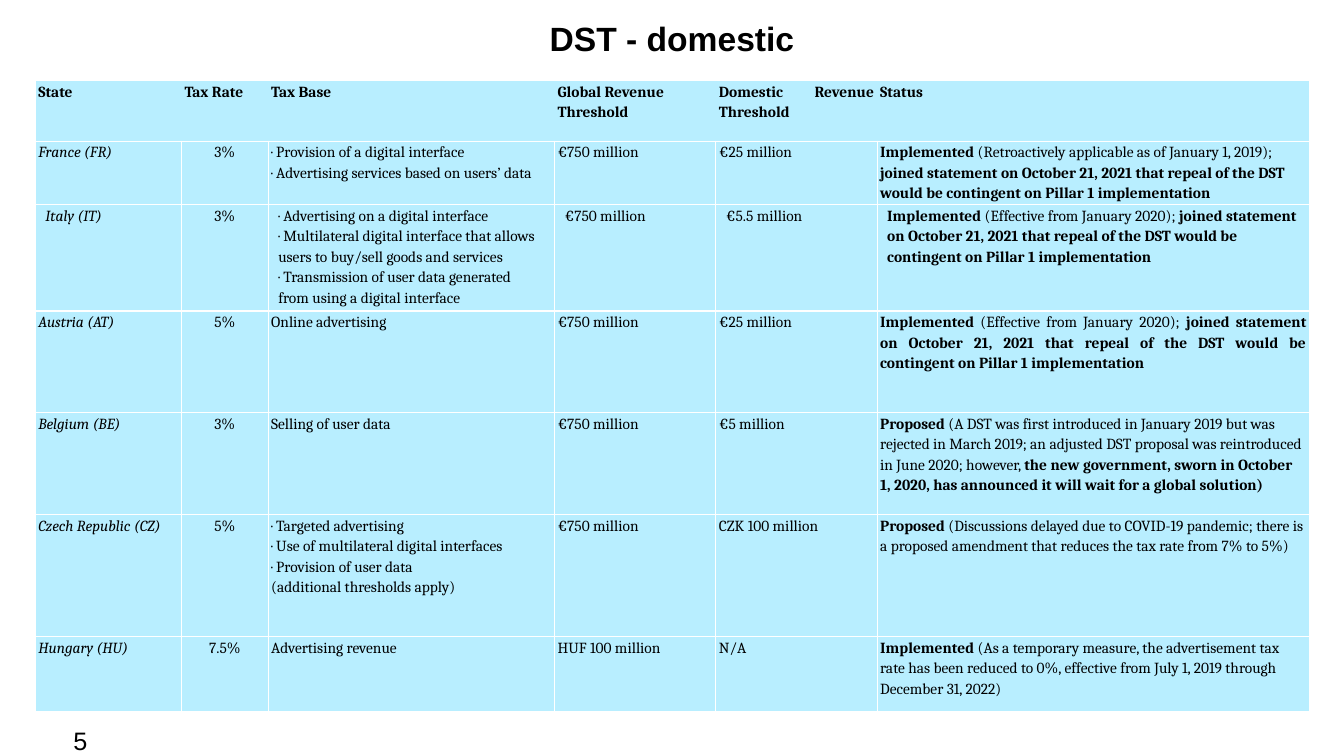
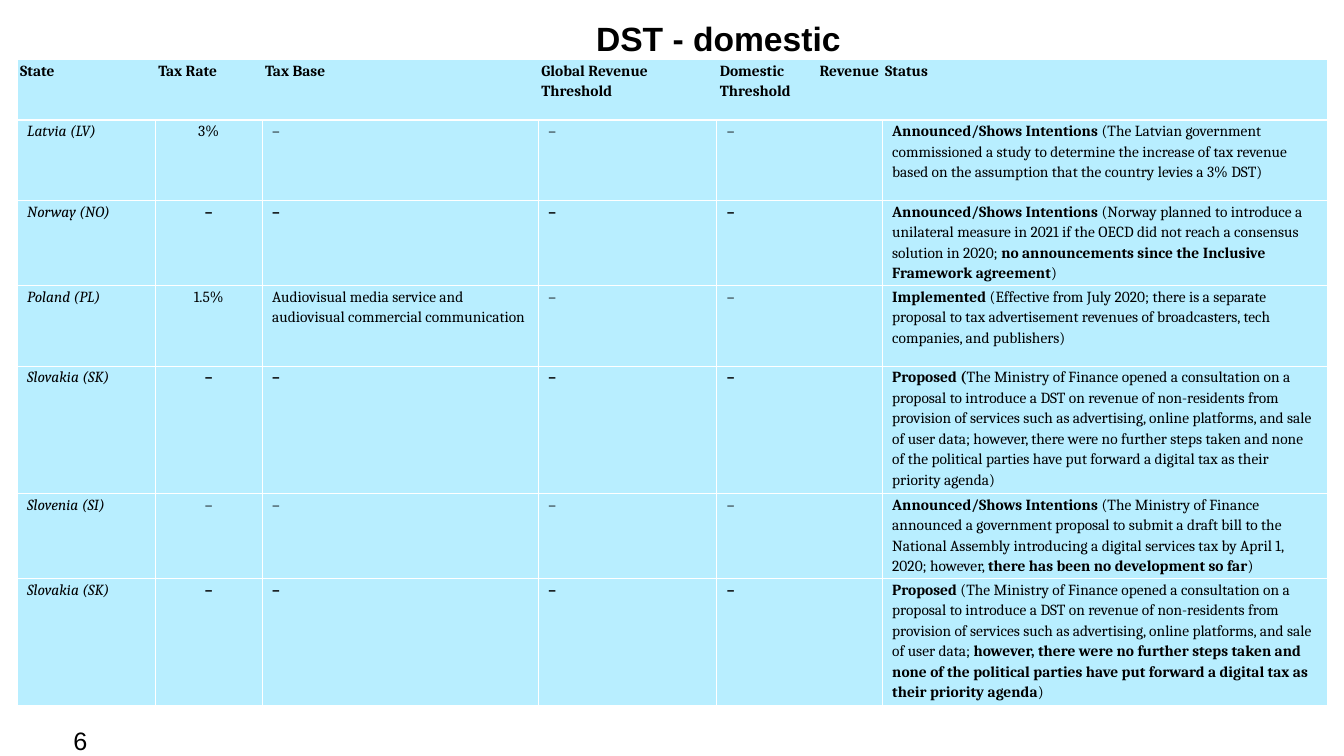
import dataclasses

import pptx
import pptx.dml.color
import pptx.enum.text
import pptx.oxml
import pptx.oxml.ns
import pptx.util
from pptx.util import Inches

BLACK = "000000"
WHITE = "FFFFFF"
LIGHT_BLUE = "B8EEFF"
ALIGN = pptx.enum.text.PP_ALIGN
ANCHOR = pptx.enum.text.MSO_ANCHOR

NARROW_INSET = 0.03
WIDE_INSET = 0.1

HEADINGS = ["State", "Tax Rate", "Tax Base", "Global Revenue Threshold",
            "Domestic Revenue Threshold", "Status"]
RATE_COLUMN = 1
DOMESTIC_COLUMN = 4

REPEAL = ("**joined statement on October 21, 2021 that repeal of the DST would be "
          "contingent on Pillar 1 implementation**")
EFFECTIVE_2020 = "**Implemented** (Effective from January 2020); " + REPEAL
CONSULTATION = ("The Ministry of Finance opened a consultation on a proposal to introduce "
                "a DST on revenue of non-residents from provision of services such as "
                "advertising, online platforms, and sale of user data; ")
NO_STEPS = ("however, there were no further steps taken and none of the political parties "
            "have put forward a digital tax as their priority agenda")


@dataclasses.dataclass
class StateRow:
    """Cells of one state; text between ** marks is bold."""
    cells: list
    inset: float = NARROW_INSET
    align: ALIGN = ALIGN.LEFT


def dash_row(state, rate, dash, status):
    """Row of a state with no tax base and no thresholds."""
    return StateRow([state, rate, dash, dash, dash, status], WIDE_INSET)


FIRST_STATES = [
    StateRow(["France (FR)", "3%",
              "· Provision of a digital interface\n"
              "· Advertising services based on users’ data",
              "€750 million", "€25 million",
              "**Implemented** (Retroactively applicable as of January 1, 2019); " + REPEAL]),
    StateRow(["Italy (IT)", "3%",
              "· Advertising on a digital interface\n"
              "· Multilateral digital interface that allows users to buy/sell goods and "
              "services\n"
              "· Transmission of user data generated from using a digital interface",
              "€750 million", "€5.5 million", EFFECTIVE_2020], WIDE_INSET),
    StateRow(["Austria (AT)", "5%", "Online advertising", "€750 million", "€25 million",
              EFFECTIVE_2020], align=ALIGN.JUSTIFY),
    StateRow(["Belgium (BE)", "3%", "Selling of user data", "€750 million", "€5 million",
              "**Proposed** (A DST was first introduced in January 2019 but was rejected in "
              "March 2019; an adjusted DST proposal was reintroduced in June 2020; however, "
              "**the new government, sworn in October 1, 2020, has announced it will wait "
              "for a global solution)**"]),
    StateRow(["Czech Republic (CZ)", "5%",
              "· Targeted advertising\n· Use of multilateral digital interfaces\n"
              "· Provision of user data\n(additional thresholds apply)",
              "€750 million", "CZK 100 million",
              "**Proposed** (Discussions delayed due to COVID-19 pandemic; there is a "
              "proposed amendment that reduces the tax rate from 7% to 5%)"]),
    StateRow(["Hungary (HU)", "7.5%", "Advertising revenue", "HUF 100 million", "N/A",
              "**Implemented** (As a temporary measure, the advertisement tax rate has been "
              "reduced to 0%, effective from July 1, 2019 through December 31, 2022)"]),
]

SECOND_STATES = [
    dash_row("Latvia (LV)", "3%", "–",
             "**Announced/Shows Intentions** (The Latvian government commissioned a study "
             "to determine the increase of tax revenue based on the assumption that the "
             "country levies a 3% DST)"),
    dash_row("Norway (NO)", "**–**", "**–**",
             "**Announced/Shows Intentions** (Norway planned to introduce a unilateral "
             "measure in 2021 if the OECD did not reach a consensus solution in 2020; "
             "**no announcements since the Inclusive Framework agreement**)"),
    StateRow(["Poland (PL)", "1.5%",
              "Audiovisual media service and audiovisual commercial communication", "–", "–",
              "**Implemented** (Effective from July 2020; there is a separate proposal to "
              "tax advertisement revenues of broadcasters, tech companies, and publishers)"],
             WIDE_INSET),
    dash_row("Slovakia (SK)", "**–**", "**–**",
             "**Proposed (**" + CONSULTATION + NO_STEPS + ")"),
    dash_row("Slovenia (SI)", "–", "–",
             "**Announced/Shows Intentions** (The Ministry of Finance announced a government "
             "proposal to submit a draft bill to the National Assembly introducing a digital "
             "services tax by April 1, 2020; however, **there has been no development so "
             "far**)"),
    dash_row("Slovakia (SK)", "**–**", "**–**",
             "**Proposed** (" + CONSULTATION + "**" + NO_STEPS + "**)"),
]


def rgb(color):
    return pptx.dml.color.RGBColor.from_string(color)


def write_text(frame, text, *, font="Cambria", size=11, color=BLACK, bold=False,
               italic=False, align=ALIGN.LEFT, line_spacing=None):
    """Fill a text frame, one paragraph a line; ** marks switch bold on and off."""
    frame.word_wrap = True
    for index, line in enumerate(text.split("\n")):
        paragraph = frame.add_paragraph() if index else frame.paragraphs[0]
        paragraph.alignment = align
        paragraph.line_spacing = line_spacing
        for position, part in enumerate(line.split("**")):
            if not part:
                continue
            run = paragraph.add_run()
            run.text = part
            run.font.name = font
            run.font.size = pptx.util.Pt(size)
            run.font.bold = bold or position % 2 == 1
            run.font.italic = italic
            run.font.color.rgb = rgb(color)


def add_text_box(slide, left, top, width, height, text, **text_format):
    box = slide.shapes.add_textbox(Inches(left), Inches(top), Inches(width), Inches(height))
    write_text(box.text_frame, text, font="Arial", **text_format)
    return box.text_frame


def add_title(slide, left, text):
    frame = add_text_box(slide, left, 0.02, 12.07, 0.79, text, size=24, bold=True,
                         align=ALIGN.CENTER, line_spacing=pptx.util.Pt(24))
    frame.vertical_anchor = ANCHOR.MIDDLE
    frame.margin_left = frame.margin_right = frame.margin_top = frame.margin_bottom = 0


def set_borders(cell, visible_sides):
    """Draw white lines on the given sides (of L, R, T, B) and none on the others."""
    properties = cell._tc.get_or_add_tcPr()
    namespace = pptx.oxml.ns.nsdecls("a")
    for index, side in enumerate("LRTB"):
        paint = "<a:noFill/>"
        if side in visible_sides:
            paint = f'<a:solidFill><a:srgbClr val="{WHITE}"/></a:solidFill>'
        line = pptx.oxml.parse_xml(f'<a:ln{side} {namespace} w="12700">{paint}</a:ln{side}>')
        properties.insert(index, line)


def format_cell(cell, text, inset, visible_sides, **text_format):
    cell.margin_left = cell.margin_right = Inches(inset)
    cell.margin_top = cell.margin_bottom = 0
    cell.fill.solid()
    cell.fill.fore_color.rgb = rgb(LIGHT_BLUE)
    set_borders(cell, visible_sides)
    write_text(cell.text_frame, text, line_spacing=1.15, **text_format)


def add_tax_table(slide, left, top, widths, heights, states):
    frame = slide.shapes.add_table(len(heights), len(widths), Inches(left), Inches(top),
                                   Inches(sum(widths)), Inches(sum(heights)))
    table = frame.table
    table.first_row = table.horz_banding = False
    for column, width in zip(table.columns, widths):
        column.width = Inches(width)
    for row, height in zip(table.rows, heights):
        row.height = Inches(height)

    outer_sides = {0: "LTB", len(HEADINGS) - 1: "RTB"}
    for column, heading in enumerate(HEADINGS):
        align = ALIGN.JUSTIFY if column == DOMESTIC_COLUMN else ALIGN.LEFT
        format_cell(table.cell(0, column), heading, NARROW_INSET,
                    outer_sides.get(column, "TB"), bold=True, align=align)
    for row, state in enumerate(states, start=1):
        for column, text in enumerate(state.cells):
            align = ALIGN.CENTER if column == RATE_COLUMN else state.align
            format_cell(table.cell(row, column), text, state.inset, "LRTB",
                        italic=column == 0, align=align)


def add_tax_slide(presentation, number, title_left, **table_layout):
    slide = presentation.slides.add_slide(presentation.slide_layouts[6])
    add_title(slide, title_left, "DST - domestic")
    add_text_box(slide, 0.63, 7.15, 0.47, 0.28, str(number), size=18)
    add_tax_table(slide, **table_layout)


def main():
    presentation = pptx.Presentation()
    presentation.slide_width = Inches(13.33)
    presentation.slide_height = Inches(7.5)
    add_tax_slide(presentation, 5, 0.63, left=0.35, top=0.8,
                  widths=[1.45, 0.86, 2.84, 1.6, 1.6, 4.29],
                  heights=[0.6, 0.6, 1.01, 1.01, 1.01, 1.21, 0.74], states=FIRST_STATES)
    add_tax_slide(presentation, 6, 1.09, left=0.17, top=0.59,
                  widths=[1.37, 1.06, 2.74, 1.77, 1.64, 4.42],
                  heights=[0.6] + [0.8] * len(SECOND_STATES), states=SECOND_STATES)
    presentation.save("out.pptx")


if __name__ == "__main__":
    main()
